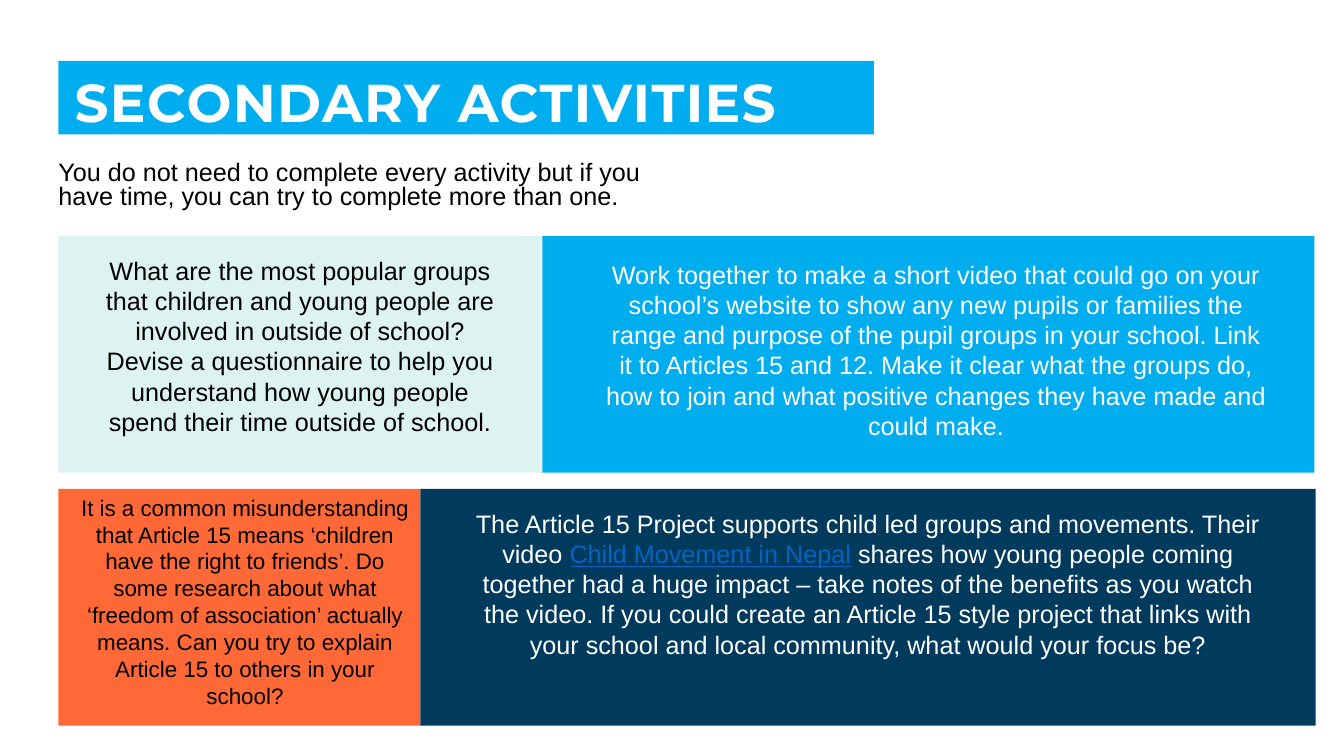
from dataclasses import dataclass

from lxml.etree import SubElement
from pptx import Presentation
from pptx.dml.color import RGBColor as Rgb
from pptx.enum.shapes import MSO_SHAPE as Kind
from pptx.enum.text import MSO_ANCHOR as Anchor, MSO_AUTO_SIZE as Fit, PP_ALIGN as Align
from pptx.oxml.ns import qn
from pptx.util import Pt

HUES = {
    "white": "FFFFFF", "black": "000000", "sky": "00AEEF", "mint": "DDF3F1",
    "coral": "FF6937", "navy": "003B5E", "link": "0563C1",
}
LEFT, HIGH = 41.76, 169.2
ROWS = (168.5, 349.2)


@dataclass
class Run:
    """A stretch of text in one style."""
    text: str
    hue: str = "black"
    size: float = 18
    face: str = "Arial"
    bold: bool = False
    under: bool = False


@dataclass
class Panel:
    """A coloured block and the text box on it."""
    row: int
    left: float
    wide: float
    fill: str
    box: tuple[float, float, float, float]
    runs: list[Run]


PANELS = [
    Panel(0, LEFT, 345.6, "mint", (63.4, 178.6, 301.7, 138.2), [
        Run("What are the most popular groups that children and young people are involved in "
            "outside of school? Devise a questionnaire to help you understand how young people "
            "spend their time outside of school."),
    ]),
    Panel(1, LEFT, 258.5, "coral", (49.7, 349.2, 250.6, 177.1), [
        Run("It is a common misunderstanding that Article 15 means ‘children have the right to "
            "friends’. Do some research about what ‘freedom of association’ actually means. Can "
            "you try to explain Article 15 to others in your school?", size=16),
    ]),
    Panel(0, 387.36, 551.5, "sky", (424.1, 181.4, 488.9, 138.2), [
        Run("Work together to make a short video that could go on your school’s website to show "
            "any new pupils or families the range and purpose of the pupil groups in your school. "
            "Link it to Articles 15 and 12. Make it clear what the groups do, how to join and what "
            "positive changes they have made and could make.", "white"),
    ]),
    Panel(1, 300.26, 639.4, "navy", (324, 359.3, 591.8, 116.6), [
        Run("The Article 15 Project supports child led groups and movements. Their video ", "white"),
        Run("Child Movement in Nepal", "link", under=True),
        Run(" shares how young people coming together had a huge impact – take notes of the "
            "benefits as you watch the video. If you could create an Article 15 style project that "
            "links with your school and local community, what would your focus be?", "white"),
    ]),
]


def paint(shape, hue: str) -> None:
    """Fill a shape with one colour."""
    shape.fill.solid()
    shape.fill.fore_color.rgb = Rgb.from_string(HUES[hue])


def place(shape, box: tuple[float, float, float, float]) -> None:
    """Move and size a shape."""
    shape.left, shape.top, shape.width, shape.height = map(Pt, box)


def pad(frame, left: float, top: float, right: float, base: float) -> None:
    """Set the insets of a text frame."""
    frame.margin_left, frame.margin_top = Pt(left), Pt(top)
    frame.margin_right, frame.margin_bottom = Pt(right), Pt(base)


def write(frame, runs: list[Run], align: Align, anchor: Anchor, lead: float = 1.0):
    """Write the runs as one paragraph and return it."""
    frame.word_wrap = True
    frame.auto_size = Fit.NONE
    frame.vertical_anchor = anchor
    para = frame.paragraphs[0]
    para.alignment = align
    para.line_spacing = lead
    para.space_before = Pt(0)
    for run in runs:
        part = para.add_run()
        part.text = run.text
        font = part.font
        font.name, font.size = run.face, Pt(run.size)
        font.bold, font.underline = run.bold, run.under
        font.color.rgb = Rgb.from_string(HUES[run.hue])
    return para


def head(slide) -> None:
    """Format the title and the intro."""
    title, intro = slide.shapes.title, slide.placeholders[1]
    place(title, (LEFT, 43.4, 582.5, 52.7))
    paint(title, "sky")
    pad(title.text_frame, 11.5, 11.5, 8.6, 0)
    para = write(title.text_frame,
                 [Run("SECONDARY ACTIVITIES", "white", 38, "Montserrat", True)],
                 Align.LEFT, Anchor.MIDDLE, 0.9)
    para.runs[0].font._element.set("spc", "100")

    place(intro, (LEFT, 112.3, 447.1, 44.6))
    pad(intro.text_frame, 0, 3.6, 7.2, 3.6)
    para = write(intro.text_frame,
                 [Run("You do not need to complete every activity but if you have time, "
                      "you can try to complete more than one.")],
                 Align.LEFT, Anchor.TOP, 0.8)
    props = para._p.get_or_add_pPr()
    props.set("marL", "0")
    props.set("indent", "0")
    SubElement(props, qn("a:buNone"))


def draw(slide, panel: Panel) -> None:
    """Draw a panel with its text."""
    block = slide.shapes.add_shape(Kind.RECTANGLE, Pt(panel.left), Pt(ROWS[panel.row]),
                                   Pt(panel.wide), Pt(HIGH))
    block.shadow.inherit = False
    block.line.fill.background()
    paint(block, panel.fill)
    label = slide.shapes.add_textbox(*map(Pt, panel.box))
    write(label.text_frame, panel.runs, Align.CENTER, Anchor.TOP)


def main() -> None:
    """Build and save the slide."""
    deck = Presentation()
    deck.slide_width, deck.slide_height = Pt(960), Pt(540)
    slide = deck.slides.add_slide(deck.slide_layouts[1])
    head(slide)
    for panel in PANELS:
        draw(slide, panel)
    deck.save("out.pptx")


if __name__ == "__main__":
    main()
